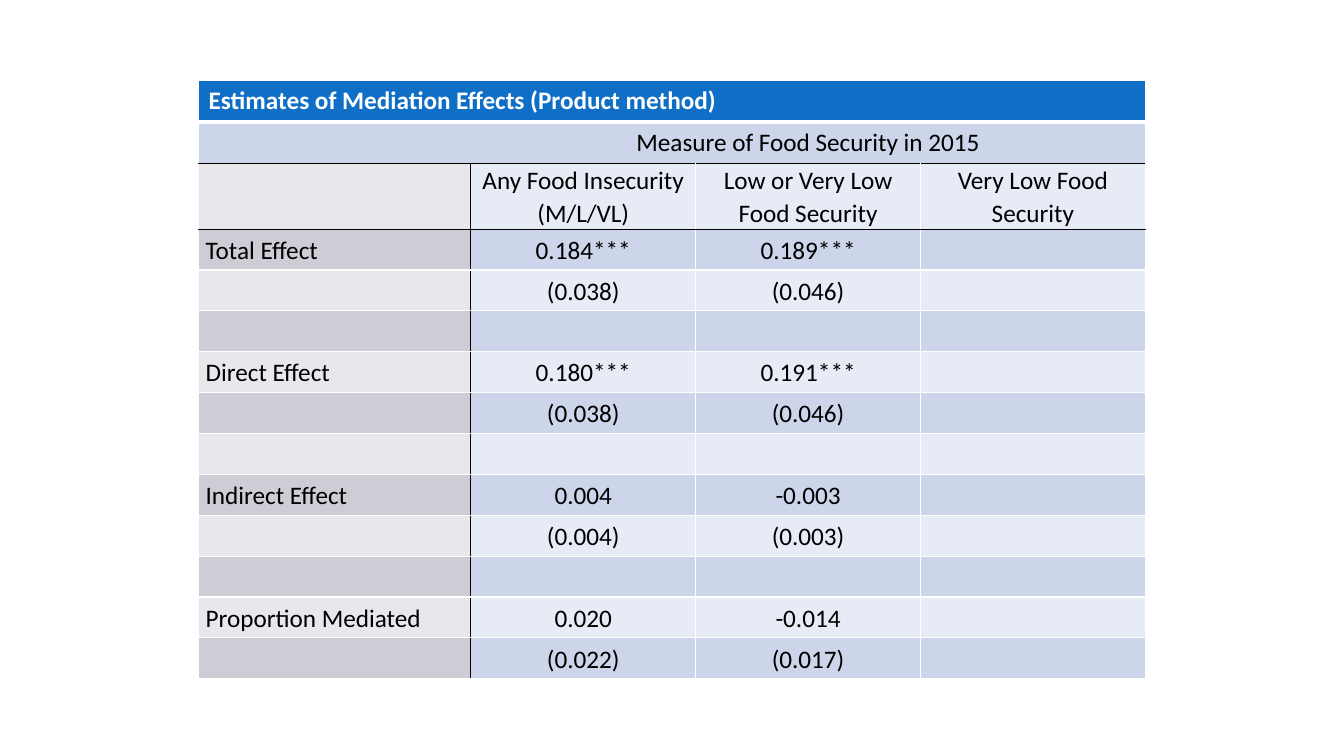
from dataclasses import dataclass

from lxml import etree
from pptx import Presentation
from pptx import util as u
from pptx.dml.color import RGBColor
from pptx.enum import text
from pptx.oxml import ns
from pptx.table import Table, _Cell

COLORS = {
    "title": "0F6FC6",
    "dark_band": "CCD5EA",
    "light_band": "E7EBF5",
    "dark_label": "D0CCD6",
    "light_label": "E9E7EC",
    "white": "FFFFFF",
    "black": "000000",
}
COLUMN_WIDTHS = [2.7, 2.23, 2.23, 2.23]
HEADING_HEIGHTS = [0.41, 0.41, 0.64]
TABLE_HEIGHT = 5.9
HEADING_ROWS = len(HEADING_HEIGHTS)


@dataclass(frozen=True)
class Effect:
    name: str
    estimates: tuple[str, str]
    errors: tuple[str, str]


@dataclass(frozen=True)
class Edge:
    color: str
    width: float = 1


EFFECTS = [
    Effect("Total Effect", ("0.184***", "0.189***"), ("(0.038)", "(0.046)")),
    Effect("Direct Effect", ("0.180***", "0.191***"), ("(0.038)", "(0.046)")),
    Effect("Indirect Effect", ("0.004", "-0.003"), ("(0.004)", "(0.003)")),
    Effect("Proportion Mediated", ("0.020", "-0.014"), ("(0.022)", "(0.017)")),
]
MEASURES = [
    "Any Food Insecurity\n(M/L/VL)",
    "Low or Very Low Food Security",
    "Very Low Food Security",
]


def table_rows() -> list[list[str]]:
    rows = [
        ["Estimates of Mediation Effects (Product method)", "", "", ""],
        ["", "Measure of Food Security in 2015", "", ""],
        ["", *MEASURES],
    ]
    for effect in EFFECTS:
        rows += [[effect.name, *effect.estimates, ""], ["", *effect.errors, ""], [""] * 4]
    return rows[:-1]  # no spacer row after the last effect


def fill_color(row: int, column: int) -> str:
    if row == 0:
        return "title"
    shade = "dark" if row % 2 else "light"
    return f"{shade}_label" if column == 0 and row >= 2 else f"{shade}_band"


def horizontal_edge(index: int) -> Edge:
    """Edge above the row with this index."""
    return Edge("black") if index in (2, 3) else Edge("white", 3 if index == 1 else 1)


def vertical_edge(row: int, index: int) -> Edge | None:
    """Edge to the left of the column with this index."""
    if row < 2 and 0 < index < len(COLUMN_WIDTHS):
        return None
    return Edge("black" if index == 1 else "white")


def draw_edge(cell: _Cell, side: str, edge: Edge | None) -> None:
    properties = cell._tc.get_or_add_tcPr()
    line = etree.SubElement(properties, ns.qn(f"a:ln{side}"))
    if edge is None:
        etree.SubElement(line, ns.qn("a:noFill"))
        return
    line.set("w", str(u.Pt(edge.width)))
    fill = etree.SubElement(line, ns.qn("a:solidFill"))
    etree.SubElement(fill, ns.qn("a:srgbClr"), val=COLORS[edge.color])


def style_cell(cell: _Cell, row: int, column: int) -> None:
    # Borders come before the fill in the cell properties
    draw_edge(cell, "L", vertical_edge(row, column))
    draw_edge(cell, "R", vertical_edge(row, column + 1))
    draw_edge(cell, "T", horizontal_edge(row))
    draw_edge(cell, "B", horizontal_edge(row + 1))
    cell.fill.solid()
    cell.fill.fore_color.rgb = RGBColor.from_string(COLORS[fill_color(row, column)])


def write(
    cell: _Cell,
    wording: str,
    *,
    color: str = "black",
    bold: bool = False,
    centered: bool = True,
    anchor: text.MSO_ANCHOR = text.MSO_ANCHOR.MIDDLE,
    tight: bool = True,
) -> None:
    cell.vertical_anchor = anchor
    paragraph = cell.text_frame.paragraphs[0]
    paragraph.text = wording
    paragraph.alignment = text.PP_ALIGN.CENTER if centered else text.PP_ALIGN.LEFT
    if tight:
        cell.margin_left = cell.margin_right = u.Inches(0.07)
        cell.margin_top = cell.margin_bottom = 0
        paragraph.line_spacing = 1.07
    for run in paragraph.runs:
        run.font.name = "Calibri"
        run.font.size = u.Pt(18)
        run.font.bold = bold
        run.font.color.rgb = RGBColor.from_string(COLORS[color])


def write_cell(cell: _Cell, wording: str, row: int, column: int) -> None:
    if row == 0:
        write(cell, wording, color="white", bold=True, centered=False,
              anchor=text.MSO_ANCHOR.TOP, tight=False)
    elif row == 1:
        write(cell, wording, tight=False)
    elif row == 2:
        write(cell, wording, anchor=text.MSO_ANCHOR.BOTTOM)
    else:
        write(cell, wording, centered=column > 0)


def size_table(estimates: Table, row_count: int) -> None:
    body_count = row_count - HEADING_ROWS
    body_height = (TABLE_HEIGHT - sum(HEADING_HEIGHTS)) / body_count
    for column, width in zip(estimates.columns, COLUMN_WIDTHS):
        column.width = u.Inches(width)
    for row, height in zip(estimates.rows, HEADING_HEIGHTS + [body_height] * body_count):
        row.height = u.Inches(height)


def main() -> None:
    deck = Presentation()
    deck.slide_width, deck.slide_height = u.Inches(13.33), u.Inches(7.5)
    slide = deck.slides.add_slide(deck.slide_layouts[6])

    # Table frame
    rows = table_rows()
    estimates = slide.shapes.add_table(
        len(rows), len(COLUMN_WIDTHS), u.Inches(1.97), u.Inches(0.8),
        u.Inches(sum(COLUMN_WIDTHS)), u.Inches(TABLE_HEIGHT),
    ).table
    estimates.first_row = estimates.horz_banding = False
    size_table(estimates, len(rows))

    # Title and measure headings span several columns
    estimates.cell(0, 0).merge(estimates.cell(0, 3))
    estimates.cell(1, 1).merge(estimates.cell(1, 3))

    # Cells
    for row, wordings in enumerate(rows):
        for column, wording in enumerate(wordings):
            cell = estimates.cell(row, column)
            style_cell(cell, row, column)
            if wording:
                write_cell(cell, wording, row, column)

    deck.save("out.pptx")


if __name__ == "__main__":
    main()
